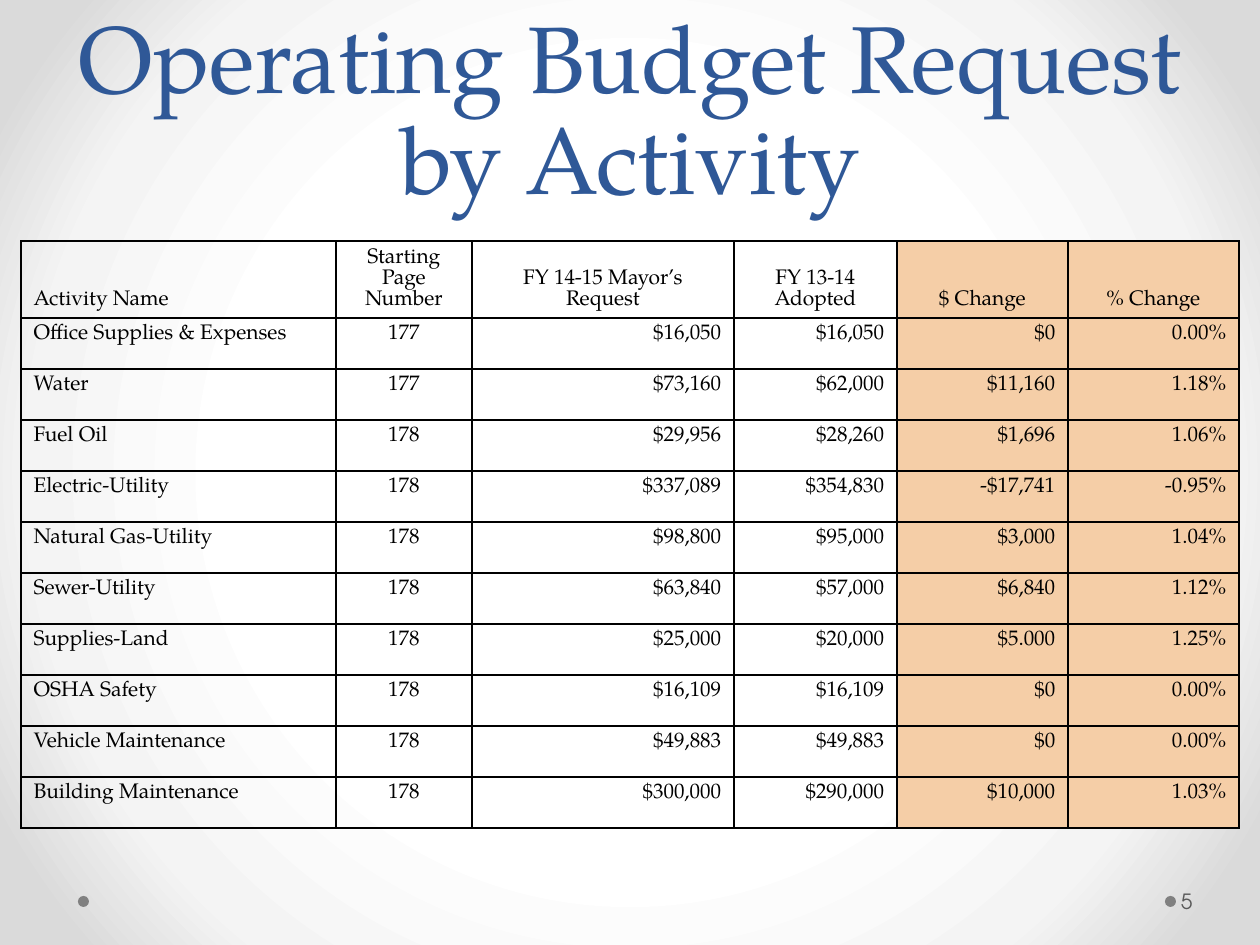
import pptx
import pptx.dml.color
import pptx.enum.shapes
import pptx.enum.text
import pptx.oxml
import pptx.oxml.ns
import pptx.util

ALIGN = pptx.enum.text.PP_ALIGN
ANCHOR = pptx.enum.text.MSO_ANCHOR

THEME = {
    "serif": "TeX Gyre Pagella", "sans": "TeX Gyre Adventor",
    "title": "2F5897", "text": "000000", "number": "595959",
    "dot": "808080", "change": "F5CEA7", "border": "000000",
    "background": [(0, "FFFFFF"), (50, "FFFFFF"), (76, "F4F4F4"),
                   (92, "DADADA"), (100, "DADADA")],
    "title_size": 54, "title_leading": 58, "body_size": 12, "body_leading": 12,
}

TITLE = "Operating Budget Request by Activity"
PAGE_NUMBER = "5"
# heading, width in px, alignment of the values, fill
COLUMNS = [
    ("Activity Name", 315, ALIGN.LEFT, None),
    ("Starting Page Number", 136, ALIGN.CENTER, None),
    ("FY 14-15 Mayor’s Request", 262, ALIGN.RIGHT, None),
    ("FY 13-14 Adopted", 163, ALIGN.RIGHT, None),
    ("$ Change", 171, ALIGN.RIGHT, THEME["change"]),
    ("% Change", 171, ALIGN.RIGHT, THEME["change"]),
]
ACTIVITIES = [
    ("Office Supplies & Expenses", "177", "$16,050", "$16,050", "$0", "0.00%"),
    ("Water", "177", "$73,160", "$62,000", "$11,160", "1.18%"),
    ("Fuel Oil", "178", "$29,956", "$28,260", "$1,696", "1.06%"),
    ("Electric-Utility", "178", "$337,089", "$354,830", "-$17,741", "-0.95%"),
    ("Natural Gas-Utility", "178", "$98,800", "$95,000", "$3,000", "1.04%"),
    ("Sewer-Utility", "178", "$63,840", "$57,000", "$6,840", "1.12%"),
    ("Supplies-Land", "178", "$25,000", "$20,000", "$5.000", "1.25%"),
    ("OSHA Safety", "178", "$16,109", "$16,109", "$0", "0.00%"),
    ("Vehicle Maintenance", "178", "$49,883", "$49,883", "$0", "0.00%"),
    ("Building Maintenance", "178", "$300,000", "$290,000", "$10,000", "1.03%"),
]
TABLE_LEFT, TABLE_TOP = 21, 241
HEADER_HEIGHT, ROW_HEIGHT = 77, 51
DOT_LEFTS, DOT_TOP, DOT_SIZE = (1165, 78), 896, 11


def px(length):
    return pptx.util.Emu(round(length * 914400 / 126))


def rgb(code):
    return pptx.dml.color.RGBColor.from_string(code)


def write(paragraph, text, font, size, color, align=ALIGN.LEFT, leading=None):
    paragraph.alignment = align
    if leading:
        paragraph.line_spacing = pptx.util.Pt(leading)
    run = paragraph.add_run()
    run.text = text
    run.font.name = font
    run.font.size = pptx.util.Pt(size)
    run.font.bold = False
    run.font.color.rgb = rgb(color)


def set_background(slide):
    """Radial gradient, light in the middle."""
    stops = "".join(f'<a:gs pos="{position * 1000}"><a:srgbClr val="{color}"/></a:gs>'
                    for position, color in THEME["background"])
    background = pptx.oxml.parse_xml(
        f'<p:bg {pptx.oxml.ns.nsdecls("p", "a")}><p:bgPr><a:gradFill rotWithShape="1">'
        f'<a:gsLst>{stops}</a:gsLst><a:path path="circle">'
        '<a:fillToRect l="50000" t="50000" r="50000" b="50000"/></a:path></a:gradFill>'
        '<a:effectLst/></p:bgPr></p:bg>')
    slide.element.cSld.insert(0, background)


def set_borders(cell):
    properties = cell._tc.get_or_add_tcPr()
    for index, side in enumerate(("lnL", "lnR", "lnT", "lnB")):
        properties.insert(index, pptx.oxml.parse_xml(
            f'<a:{side} {pptx.oxml.ns.nsdecls("a")} w="12700"><a:solidFill>'
            f'<a:srgbClr val="{THEME["border"]}"/></a:solidFill></a:{side}>'))


def add_dots(slide):
    for left in DOT_LEFTS:
        dot = slide.shapes.add_shape(pptx.enum.shapes.MSO_SHAPE.OVAL, px(left),
                                     px(DOT_TOP), px(DOT_SIZE), px(DOT_SIZE))
        dot.shadow.inherit = False
        dot.fill.solid()
        dot.fill.fore_color.rgb = rgb(THEME["dot"])
        dot.line.fill.background()


def add_title(slide):
    title = slide.shapes.title
    title.left, title.top, title.width, title.height = px(63), px(0), px(1134), px(220)
    frame = title.text_frame
    frame.auto_size = pptx.enum.text.MSO_AUTO_SIZE.NONE
    frame.vertical_anchor = ANCHOR.BOTTOM
    write(frame.paragraphs[0], TITLE, THEME["serif"], THEME["title_size"],
          THEME["title"], ALIGN.CENTER, THEME["title_leading"])


def add_budget_table(slide):
    rows = [[column[0] for column in COLUMNS], *ACTIVITIES]
    heights = [HEADER_HEIGHT] + [ROW_HEIGHT] * len(ACTIVITIES)
    width = sum(column[1] for column in COLUMNS)
    table = slide.shapes.add_table(len(rows), len(COLUMNS), px(TABLE_LEFT), px(TABLE_TOP),
                                   px(width), px(sum(heights))).table
    table.first_row = table.horz_banding = False
    for row, height in zip(table.rows, heights):
        row.height = px(height)
    for c, (_, column_width, value_align, fill) in enumerate(COLUMNS):
        table.columns[c].width = px(column_width)
        for r, values in enumerate(rows):
            cell = table.cell(r, c)
            is_header = r == 0
            cell.vertical_anchor = ANCHOR.BOTTOM if is_header else ANCHOR.TOP
            if fill:
                cell.fill.solid()
                cell.fill.fore_color.rgb = rgb(fill)
            else:
                cell.fill.background()
            set_borders(cell)
            align = ALIGN.CENTER if is_header and c > 0 else value_align
            write(cell.text_frame.paragraphs[0], values[c], THEME["serif"],
                  THEME["body_size"], THEME["text"], align, THEME["body_leading"])


def add_page_number(slide):
    frame = slide.shapes.add_textbox(px(1177), px(876), px(77), px(50)).text_frame
    frame.word_wrap = True
    frame.vertical_anchor = ANCHOR.MIDDLE
    frame.margin_left = px(4)
    frame.margin_right = px(6)
    write(frame.paragraphs[0], PAGE_NUMBER, THEME["sans"], THEME["body_size"],
          THEME["number"])


def main():
    presentation = pptx.Presentation()
    presentation.slide_width, presentation.slide_height = px(1260), px(945)
    slide = presentation.slides.add_slide(presentation.slide_layouts[5])
    set_background(slide)
    add_dots(slide)
    add_title(slide)
    add_budget_table(slide)
    add_page_number(slide)
    presentation.save("out.pptx")


if __name__ == "__main__":
    main()
